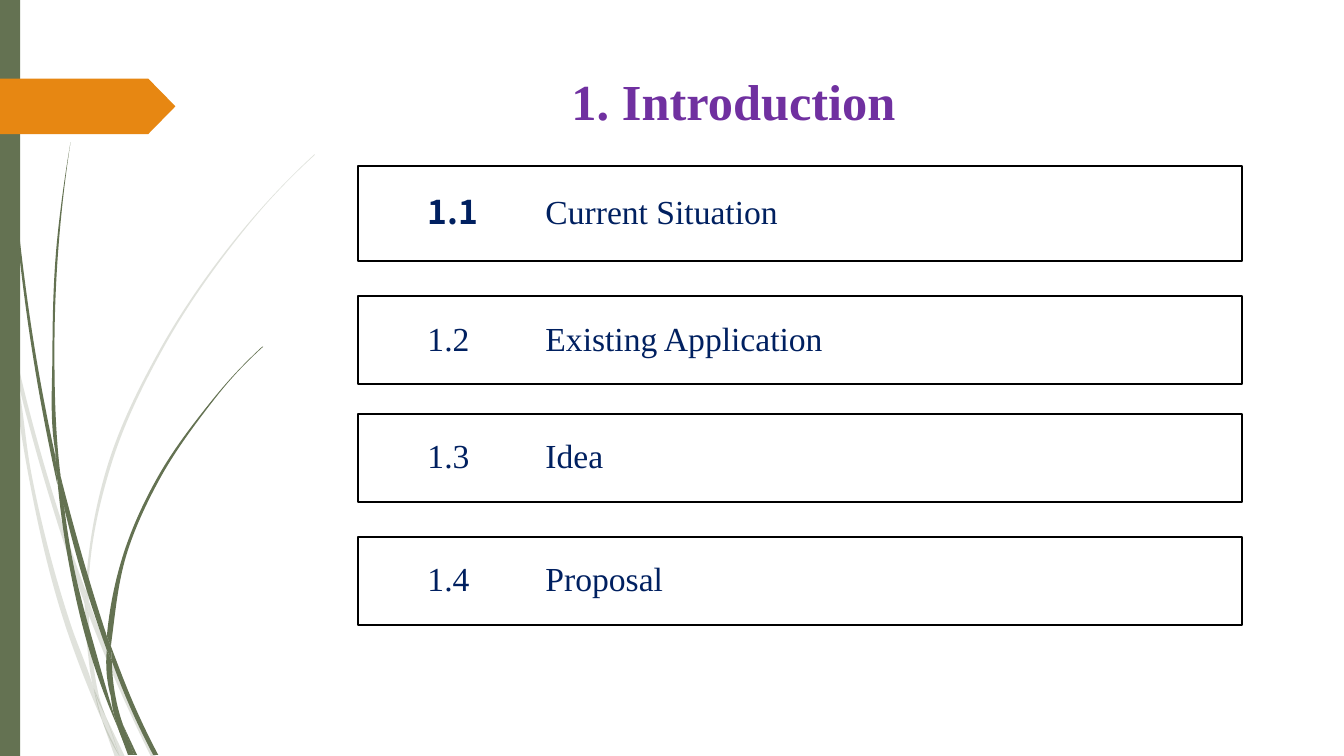
"""Build the introduction agenda slide with its grass-blade side decoration."""
from dataclasses import dataclass
from math import dist

from lxml import etree
from pptx import Presentation
from pptx.dml.color import RGBColor
from pptx.enum.shapes import MSO_SHAPE as Preset
from pptx.enum.text import MSO_ANCHOR as Anchor, PP_ALIGN as Align
from pptx.oxml.ns import qn
from pptx.util import Inches, Pt


@dataclass(frozen=True)
class Theme:
    """Colours, fonts and type sizes of the slide."""
    green: str = "647252"
    orange: str = "E78712"
    purple: str = "7030A0"
    navy: str = "002060"
    white: str = "FFFFFF"
    black: str = "000000"
    serif: str = "Times New Roman"
    sans: str = "Noto Sans CJK SC"
    title_size: int = 36
    topic_size: int = 24
    border: float = 1.25


THEME = Theme()
WIDTH, HEIGHT = 13.33, 7.5
TITLE = "1. Introduction"
TITLE_BOX = (2.4, 0.65, 9.75, 0.8)
TOPIC_LEFT, TOPIC_WIDTH = 3.55, 8.77
TOPIC_INSET, TOPIC_TAB = 0.69, 1.17
SMALL_INSET = 0.07

TOPICS = [
    ("1.1", "Current Situation", 1.65, 0.94, THEME.sans, True),
    ("1.2", "Existing Application", 2.94, 0.87, THEME.serif, False),
    ("1.3", "Idea", 4.11, 0.87, THEME.serif, False),
    ("1.4", "Proposal", 5.33, 0.87, THEME.serif, False),
]

PALE_BLADES = [
    ([(0, 2.99), (0.1, 3.44), (0.11, 3.5)], [(0, 2.82), (0.09, 3.22), (0.11, 3.5)]),
    ([(0.17, 3.76), (0.58, 5.22), (0.84, 5.99)], [(0.14, 3.45), (0.62, 5.2), (0.85, 5.86)]),
    ([(0.88, 6.1), (1.23, 6.94), (1.5, 7.51)],
     [(0.88, 5.96), (0.92, 6.07), (1.27, 6.92), (1.55, 7.51)]),
    ([(1.05, 7.11), (1.19, 7.51)], [(1.05, 7.11), (1.24, 7.51)]),
    ([(0.11, 3.5), (0.28, 4.7), (0.65, 6.21), (0.92, 6.93), (1.01, 7.14)],
     [(0.11, 3.5), (0.17, 3.76), (0.31, 4.69), (0.7, 6.19), (0.93, 6.83), (1.01, 7.14)]),
    ([(0.84, 5.99), (0.87, 6.46), (0.93, 6.83), (1.05, 7.11)],
     [(0.88, 6.1), (0.91, 6.46), (1.03, 7.06), (1.05, 7.11)]),
    ([(3.12, 1.53), (2.68, 1.97), (2.28, 2.44), (1.58, 3.48), (1.07, 4.61), (0.85, 5.86)],
     [(3.12, 1.54), (2.68, 1.98), (2.29, 2.45), (1.6, 3.49), (1.1, 4.62), (0.88, 5.84),
      (0.88, 5.96)]),
    ([(1.01, 7.14), (1.14, 7.51)], [(1.01, 7.14), (1.19, 7.51)]),
    ([(0.85, 5.86), (0.84, 5.99)], [(0.88, 5.96), (0.88, 6.1)]),
    ([(0.93, 6.83), (1.01, 7.14), (1.19, 7.51)], [(0.93, 6.83), (1.05, 7.11), (1.19, 7.51)]),
]
DARK_BLADES = [
    ([(0.03, 0), (0.07, 1.1), (0.17, 2.33), (0.33, 3.55), (0.57, 4.81)],
     [(0.04, 0), (0.08, 1.09), (0.19, 2.32), (0.36, 3.55), (0.55, 4.53)]),
    ([(0.64, 5.05), (0.88, 5.92), (1.06, 6.45)], [(0.6, 4.72), (0.93, 5.9), (1.06, 6.31)]),
    ([(1.11, 6.56), (1.32, 7.08), (1.52, 7.49)],
     [(1.1, 6.41), (1.13, 6.49), (1.36, 7.06), (1.57, 7.49)]),
    ([(0.57, 4.77), (0.68, 5.57), (0.93, 6.59), (1.17, 7.22)],
     [(0.64, 5.05), (0.72, 5.56), (0.98, 6.57), (1.17, 7.22)]),
    ([(0.7, 1.41), (0.62, 1.93), (0.56, 2.45), (0.52, 3.49), (0.55, 4.49), (0.6, 4.72)],
     [(0.7, 1.41), (0.63, 1.93), (0.58, 2.45), (0.54, 3.49), (0.58, 4.53), (0.6, 4.72)]),
    ([(1.22, 7.19), (1.33, 7.49)], [(1.22, 7.19), (1.36, 7.49)]),
    ([(0.55, 4.49), (0.57, 4.77), (0.64, 5.05)], [(0.55, 4.49), (0.6, 4.72), (0.64, 5.05)]),
    ([(2.6, 3.44), (2.31, 3.73), (2.04, 4.05), (1.56, 4.74), (1.22, 5.51), (1.06, 6.31)],
     [(2.61, 3.44), (2.31, 3.74), (2.05, 4.06), (1.58, 4.76), (1.25, 5.52), (1.11, 6.33),
      (1.1, 6.41)]),
    ([(1.17, 7.22), (1.27, 7.49)], [(1.17, 7.22), (1.31, 7.49)]),
    ([(1.06, 6.45), (1.1, 6.91), (1.22, 7.19)], [(1.11, 6.56), (1.21, 7.16), (1.22, 7.19)]),
    ([(1.06, 6.31), (1.06, 6.45)], [(1.1, 6.41), (1.11, 6.56)]),
    ([(1.1, 6.91), (1.17, 7.22), (1.3, 7.49)], [(1.1, 6.91), (1.22, 7.19), (1.33, 7.49)]),
]


def edge_handles(knots):
    """Return the two Bezier handles of each span of a smooth edge."""
    spans = [dist(a, b) for a, b in zip(knots, knots[1:])]
    axes = []
    for values in zip(*knots):
        rates = [(b - a) / s for a, b, s in zip(values, values[1:], spans)]
        inner = [(r0 * s1 + r1 * s0) / (s0 + s1)
                 for r0, r1, s0, s1 in zip(rates, rates[1:], spans, spans[1:])]
        first = 2 * rates[0] - inner[0] if inner else rates[0]
        last = 2 * rates[-1] - inner[-1] if inner else rates[-1]
        slopes = [first, *inner, last]
        axes.append([(values[i] + slopes[i] * s / 3, values[i + 1] - slopes[i + 1] * s / 3)
                     for i, s in enumerate(spans)])
    return [tuple(zip(xs, ys)) for xs, ys in zip(*axes)]


def paint(shape, fill, border=None):
    """Give a shape a flat fill and an optional border."""
    shape.shadow.inherit = False
    shape.fill.solid()
    shape.fill.fore_color.rgb = RGBColor.from_string(fill)
    if border:
        shape.line.color.rgb = RGBColor.from_string(border)
        shape.line.width = Pt(THEME.border)
    else:
        shape.line.fill.background()
    return shape


def add_preset(slide, preset, box, fill, border=None):
    """Add a painted preset shape."""
    return paint(slide.shapes.add_shape(preset, *map(Inches, box)), fill, border)


def add_run(paragraph, text, size, color, font, bold=False):
    """Append one formatted run."""
    run = paragraph.add_run()
    run.text = text
    run.font.size, run.font.name, run.font.bold = Pt(size), font, bold
    run.font.color.rgb = RGBColor.from_string(color)


def add_blade(slide, left_edge, right_edge, opacity):
    """Draw a piece of a blade between two smooth edges."""
    way_back = right_edge[::-1]
    points = [(Inches(x), Inches(y)) for x, y in left_edge + way_back]
    builder = slide.shapes.build_freeform(*points[0])
    builder.add_line_segments(points[1:], close=True)
    blade = paint(builder.convert_to_shape(), THEME.green)

    handles = [*edge_handles(left_edge), None, *edge_handles(way_back)]
    for line, pair in zip(list(blade._element.iter(qn("a:lnTo"))), handles):
        if pair:
            line.tag = qn("a:cubicBezTo")
            for index, (x, y) in enumerate(pair):
                handle = etree.Element(qn("a:pt"), x=str(Inches(x) - blade.left),
                                       y=str(Inches(y) - blade.top))
                line.insert(index, handle)
    if opacity < 100:
        color = blade._element.spPr.find(qn("a:solidFill"))[0]
        etree.SubElement(color, qn("a:alpha"), val=str(opacity * 1000))


def add_topic(slide, number, label, top, height, number_font, number_bold):
    """Add a bordered agenda row with a tab between number and label."""
    row = add_preset(slide, Preset.RECTANGLE, (TOPIC_LEFT, top, TOPIC_WIDTH, height),
                     THEME.white, THEME.black)
    frame = row.text_frame
    frame.word_wrap, frame.vertical_anchor = True, Anchor.MIDDLE
    frame.margin_left = Inches(TOPIC_INSET)
    frame.margin_right = frame.margin_top = frame.margin_bottom = Inches(SMALL_INSET)
    line = frame.paragraphs[0]
    line.alignment, line.line_spacing = Align.LEFT, 0.9
    tabs = etree.SubElement(line._p.get_or_add_pPr(), qn("a:tabLst"))
    etree.SubElement(tabs, qn("a:tab"), pos=str(Inches(TOPIC_TAB)), algn="l")
    add_run(line, number + "\t", THEME.topic_size, THEME.navy, number_font, number_bold)
    add_run(line, label, THEME.topic_size, THEME.navy, THEME.serif)


def main():
    """Assemble and save the slide."""
    deck = Presentation()
    deck.slide_width, deck.slide_height = Inches(WIDTH), Inches(HEIGHT)
    slide = deck.slides.add_slide(deck.slide_layouts.get_by_name("Title Only"))

    for blades, opacity in ((PALE_BLADES, 20), (DARK_BLADES, 100)):
        for left_edge, right_edge in blades:
            add_blade(slide, left_edge, right_edge, opacity)
    add_preset(slide, Preset.RECTANGLE, (0, 0, 0.2, HEIGHT), THEME.green)
    banner = add_preset(slide, Preset.PENTAGON, (0, 0.78, 1.74, 0.55), THEME.orange)
    banner.adjustments[0] = 0.49

    title = slide.shapes.title
    title.left, title.top, title.width, title.height = map(Inches, TITLE_BOX)
    title.text_frame.vertical_anchor = Anchor.TOP
    heading = title.text_frame.paragraphs[0]
    heading.alignment = Align.CENTER
    add_run(heading, TITLE, THEME.title_size, THEME.purple, THEME.serif, True)

    for topic in TOPICS:
        add_topic(slide, *topic)
    deck.save("out.pptx")


if __name__ == "__main__":
    main()
